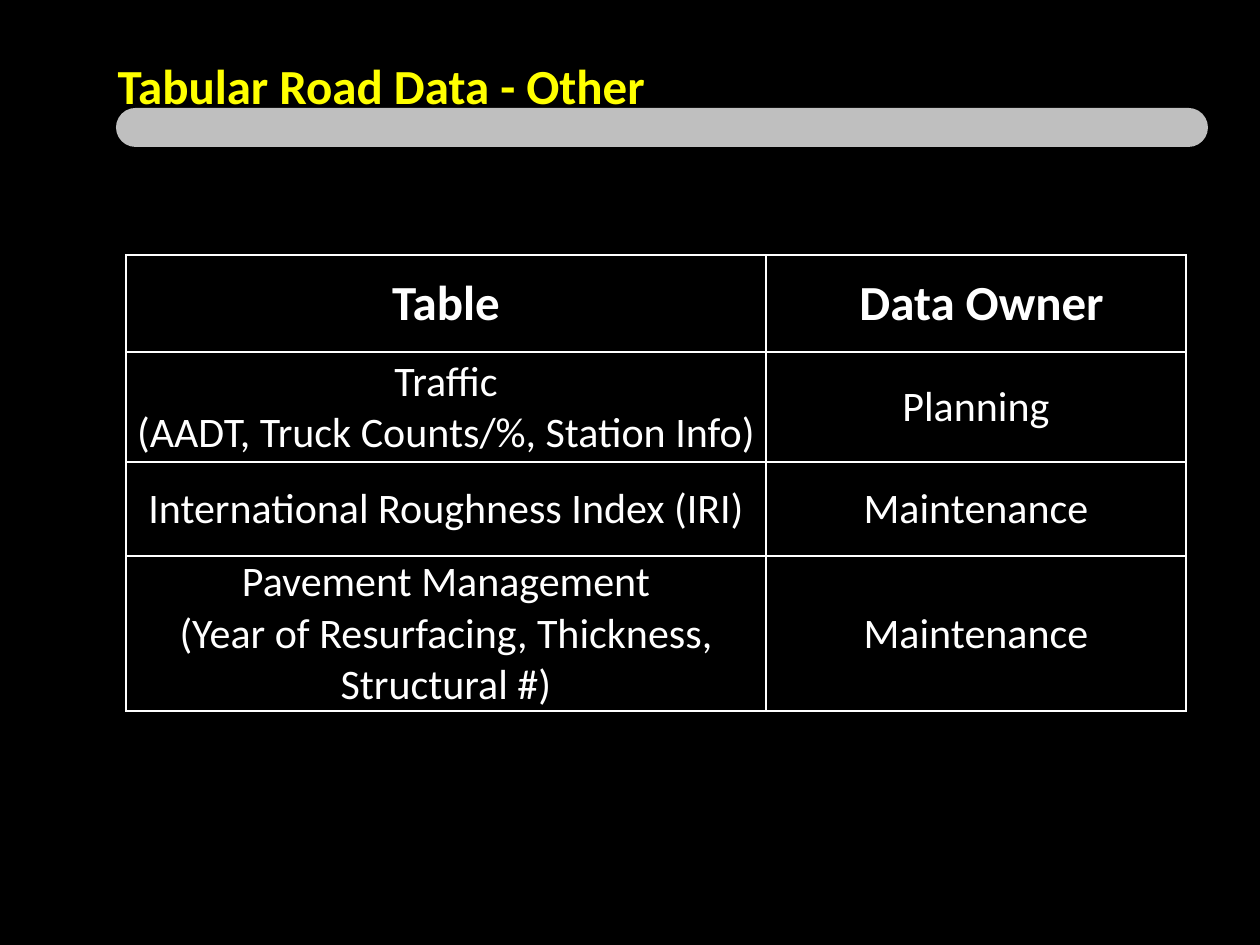
from lxml.etree import SubElement
from pptx import Presentation
from pptx.dml.color import RGBColor
from pptx.enum.shapes import MSO_SHAPE
from pptx.enum.text import MSO_ANCHOR as Anchor, MSO_AUTO_SIZE as AutoSize, PP_ALIGN as Align
from pptx.oxml.ns import qn
from pptx.util import Pt

PX = 914400 // 126
COLORS = {"background": "000000", "text": "FFFFFF", "title": "FFFF00", "bar": "BFBFBF"}
FONT = "Calibri"
COLUMN_WIDTHS = [640, 420]
ROW_HEIGHTS = [97, 110, 94, 155]
ROWS = [
    ("Table", " Data Owner"),
    ("Traffic\n(AADT, Truck Counts/%, Station Info)", "Planning"),
    ("International Roughness Index (IRI)", "Maintenance"),
    ("Pavement Management\n(Year of Resurfacing, Thickness, Structural #)", "Maintenance"),
]


def color(name):
    return RGBColor.from_string(COLORS[name])


class SlideBuilder:
    """Holds the slide and the style shared by its elements."""

    def __init__(self, slide):
        self.slide = slide
        fill = slide.background.fill
        fill.solid()
        fill.fore_color.rgb = color("background")

    def format_text(self, text_frame, size, color_name, bold, align):
        for paragraph in text_frame.paragraphs:
            paragraph.alignment = align
            for run in paragraph.runs:
                font = run.font
                font.name, font.size, font.bold = FONT, Pt(size), bold
                font.color.rgb = color(color_name)

    def bar(self, left, top, width, height):
        shape = self.slide.shapes.add_shape(
            MSO_SHAPE.ROUNDED_RECTANGLE, left * PX, top * PX, width * PX, height * PX)
        shape.adjustments[0] = 0.5
        shape.shadow.inherit = False
        shape.fill.solid()
        shape.fill.fore_color.rgb = color("bar")
        shape.line.fill.background()

    def title(self, text, left, top, width, height):
        title = self.slide.shapes.title
        title.left, title.top = left * PX, top * PX
        title.width, title.height = width * PX, height * PX
        text_frame = title.text_frame
        text_frame.text = text
        text_frame.word_wrap = True
        text_frame.auto_size = AutoSize.NONE
        text_frame.vertical_anchor = Anchor.MIDDLE
        self.format_text(text_frame, 28, "title", True, Align.LEFT)
        # The title lies in front of the bar
        title._element.getparent().append(title._element)

    def cell_borders(self, cell):
        properties = cell._tc.get_or_add_tcPr()
        for index, side in enumerate(("a:lnL", "a:lnR", "a:lnT", "a:lnB")):
            line = SubElement(properties, qn(side), w=str(Pt(1)))
            fill = SubElement(line, qn("a:solidFill"))
            SubElement(fill, qn("a:srgbClr"), val=COLORS["text"])
            properties.insert(index, line)

    def table(self, rows, left, top, column_widths, row_heights):
        table = self.slide.shapes.add_table(
            len(rows), len(column_widths), left * PX, top * PX,
            sum(column_widths) * PX, sum(row_heights) * PX).table
        table.horz_banding = False
        for column, width in zip(table.columns, column_widths):
            column.width = width * PX
        for row_index, (row, height) in enumerate(zip(rows, row_heights)):
            table.rows[row_index].height = height * PX
            is_header = row_index == 0
            for column_index, text in enumerate(row):
                cell = table.cell(row_index, column_index)
                cell.text_frame.text = text
                cell.vertical_anchor = Anchor.MIDDLE
                cell.margin_left = cell.margin_right = cell.margin_top = PX
                cell.margin_bottom = 0
                cell.fill.background()
                self.cell_borders(cell)
                self.format_text(cell.text_frame, 28 if is_header else 24,
                                 "text", is_header, Align.CENTER)


def main():
    presentation = Presentation()
    presentation.slide_width, presentation.slide_height = 1260 * PX, 945 * PX
    title_only = presentation.slide_layouts[5]
    builder = SlideBuilder(presentation.slides.add_slide(title_only))
    builder.table(ROWS, 126, 255, COLUMN_WIDTHS, ROW_HEIGHTS)
    builder.bar(116, 108, 1092, 39)
    builder.title("Tabular Road Data - Other", 105, 53, 1040, 63)
    presentation.save("out.pptx")


if __name__ == "__main__":
    main()
